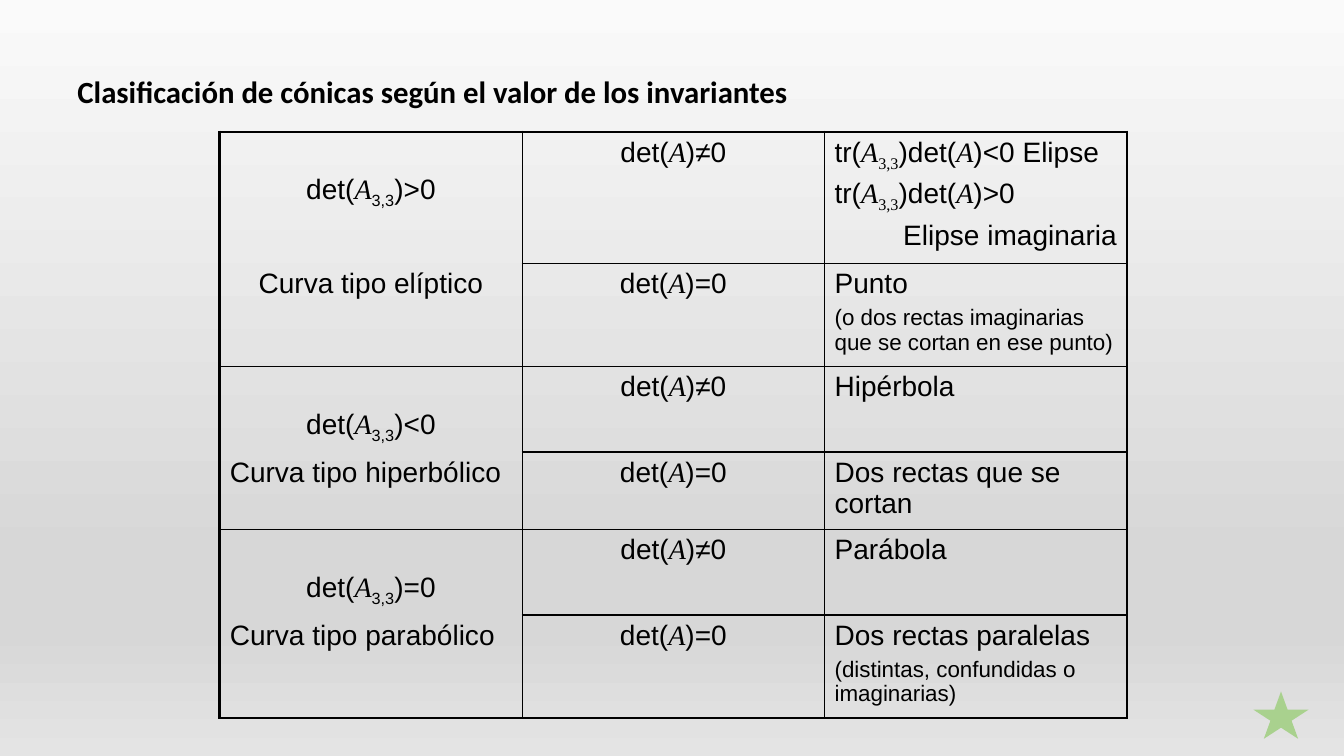
from dataclasses import dataclass

from lxml.etree import SubElement
from pptx import Presentation
from pptx.dml.color import RGBColor
from pptx.enum.shapes import MSO_AUTO_SHAPE_TYPE as Shape
from pptx.enum.text import MSO_ANCHOR as Anchor, PP_ALIGN as Align
from pptx.oxml.ns import qn
from pptx.util import Inches, Pt

COLORS = {"ink": "000000", "star": "A9D18E",
          "top": "FAFAFA", "mid": "D7D7D7", "bottom": "E4E4E4"}
GRADIENT = [(0, "top"), (74, "mid"), (83, "mid"), (100, "bottom")]
SLIDE_W, SLIDE_H = Inches(13.33), Inches(7.5)
SERIF = "Times New Roman"
THICK, THIN = 2.25, 1
LOWERED = 0.42  # top inset, in inches, of the determinant that heads each block


@dataclass(frozen=True)
class Run:
    text: str
    font: str = "Arial"
    size: float = 20
    italic: bool = False
    bold: bool = False
    baseline: int = 0


@dataclass(frozen=True)
class Para:
    runs: tuple[Run, ...]
    align: Align = Align.LEFT


@dataclass(frozen=True)
class Block:
    """One type of curve: its sign of det(A3,3), its name and its two outcomes."""
    sign: str
    curve: Para
    regular: list[Para]
    degenerate: list[Para]
    heights: tuple[float, float]  # percent of the slide's height


def across(percent: float) -> int:
    return round(SLIDE_W * percent / 100)


def down(percent: float) -> int:
    return round(SLIDE_H * percent / 100)


def para(text: str, align: Align = Align.LEFT, **fmt) -> Para:
    return Para((Run(text, **fmt),), align)


MATRIX = Run("A", SERIF, italic=True)


def minor(font: str) -> tuple[Run, Run]:
    """The symbol A with the subscript 3,3."""
    return MATRIX, Run("3,3", font, baseline=-25000)


def det(relation: str) -> Para:
    return Para((Run("det("), MATRIX, Run(")" + relation)), Align.CENTER)


def det_minor(sign: str) -> Para:
    return Para((Run("det("), *minor("Arial"), Run(")" + sign)), Align.CENTER)


def trace_test(ending: str) -> Para:
    return Para((Run("tr("), *minor(SERIF), Run(")det("), MATRIX, Run(")" + ending)))


BLOCKS = [
    Block(">0", para("Curva tipo elíptico", Align.CENTER),
          [trace_test("<0 Elipse"), trace_test(">0"),
           para("Elipse imaginaria", Align.RIGHT)],
          [para("Punto"),
           para("(o dos rectas imaginarias que se cortan en ese punto)", size=16)],
          (16.4, 12.67)),
    Block("<0", para("Curva tipo hiperbólico"),
          [para("Hipérbola")], [para("Dos rectas que se cortan")],
          (10.93, 9.6)),
    Block("=0", para("Curva tipo parabólico"),
          [para("Parábola")],
          [para("Dos rectas paralelas"),
           para("(distintas, confundidas o imaginarias)", size=16)],
          (10.93, 12.67)),
]


def write(tf, paras: list[Para], *, before: float = 0, spacing: float = 1) -> None:
    for i, item in enumerate(paras):
        p = tf.paragraphs[0] if i == 0 else tf.add_paragraph()
        p.alignment = item.align
        p.space_before = Pt(before)
        p.line_spacing = spacing
        for run in item.runs:
            r = p.add_run()
            r.text = run.text
            r.font.name, r.font.size = run.font, Pt(run.size)
            r.font.bold, r.font.italic = run.bold, run.italic
            r.font.color.rgb = RGBColor.from_string(COLORS["ink"])
            if run.baseline:
                r._r.get_or_add_rPr().set("baseline", str(run.baseline))


def set_borders(cell, widths: dict[str, float]) -> None:
    """Draw the four sides in points; a width of 0 leaves the side open."""
    tc_pr = cell._tc.get_or_add_tcPr()
    for side in "LRTB":
        ln = SubElement(tc_pr, qn(f"a:ln{side}"), w=str(Pt(widths[side])))
        if widths[side]:
            fill = SubElement(ln, qn("a:solidFill"))
            SubElement(fill, qn("a:srgbClr"), val=COLORS["ink"])
        else:
            SubElement(ln, qn("a:noFill"))


def paint_background(s) -> None:
    fill = s.background.fill
    fill.gradient()
    fill.gradient_angle = 270
    stops = s._element.find(".//" + qn("a:gsLst"))
    stops.clear()
    for percent, name in GRADIENT:
        gs = SubElement(stops, qn("a:gs"), pos=str(percent * 1000))
        SubElement(gs, qn("a:srgbClr"), val=COLORS[name])


def add_title(s) -> None:
    tf = s.shapes.add_textbox(across(5.03), down(4), across(90), down(16.67)).text_frame
    tf.word_wrap = True
    tf.vertical_anchor = Anchor.MIDDLE
    write(tf, [para("Clasificación de cónicas según el valor de los invariantes",
                    font="Calibri", size=22, bold=True)], spacing=0.9)


def add_classification(s) -> None:
    heights = [h for block in BLOCKS for h in block.heights]
    rows = []
    for block in BLOCKS:
        rows.append([[det_minor(block.sign)], [det("≠0")], block.regular])
        rows.append([[block.curve], [det("=0")], block.degenerate])
    table = s.shapes.add_table(len(rows), 3, across(16.35), down(17.47),
                               across(67.5), down(sum(heights))).table
    table.first_row = table.horz_banding = False
    for column in table.columns:
        column.width = across(22.5)
    last = len(rows) - 1
    for i, row in enumerate(rows):
        table.rows[i].height = down(heights[i])
        heads_block = i % 2 == 0
        for j, paras in enumerate(row):
            cell = table.cell(i, j)
            write(cell.text_frame, paras, before=4)
            if j == 0 and heads_block:
                cell.margin_top = Inches(LOWERED)
            top = 0 if j == 0 and not heads_block else THIN
            bottom = 0 if j == 0 and heads_block else THIN
            set_borders(cell, {"L": THICK if j == 0 else THIN,
                               "R": THICK if j == 2 else THIN,
                               "T": THICK if i == 0 else top,
                               "B": THICK if i == last else bottom})
            cell.fill.background()


def add_star(s) -> None:
    sp = s.shapes.add_shape(Shape.STAR_5_POINT, across(93.25), down(91.47),
                            across(4.13), down(6.27))
    sp.shadow.inherit = False
    sp.fill.solid()
    sp.fill.fore_color.rgb = RGBColor.from_string(COLORS["star"])
    sp.line.fill.background()


def main() -> None:
    prs = Presentation()
    prs.slide_width, prs.slide_height = SLIDE_W, SLIDE_H
    s = prs.slides.add_slide(prs.slide_layouts[6])
    paint_background(s)
    add_title(s)
    add_classification(s)
    add_star(s)
    prs.save("out.pptx")


if __name__ == "__main__":
    main()
